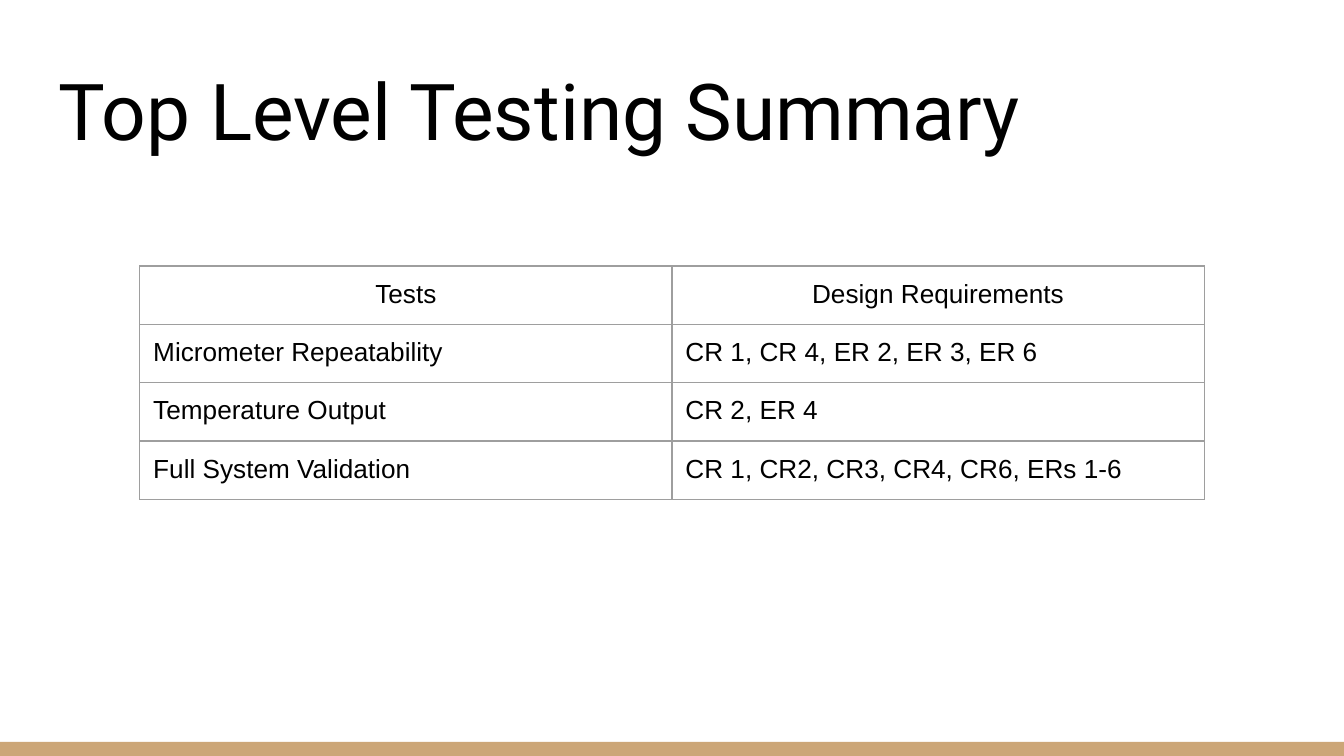
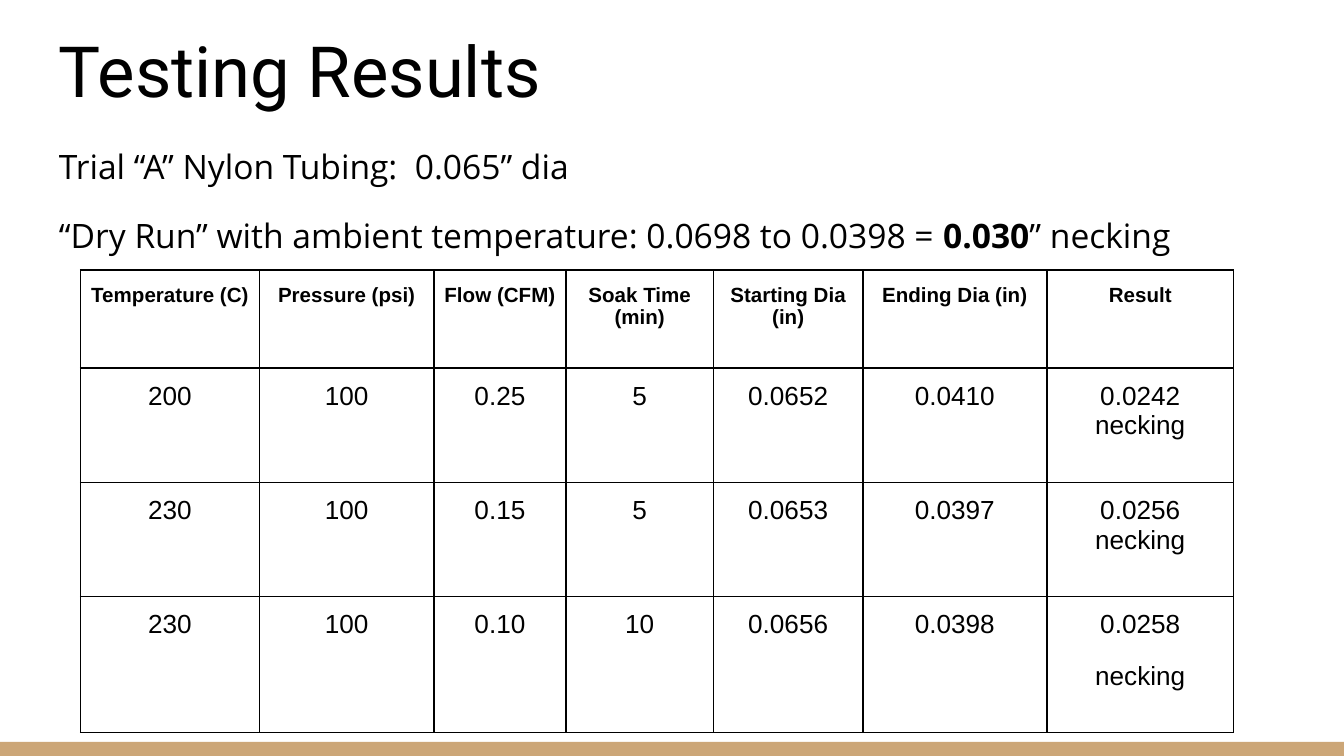
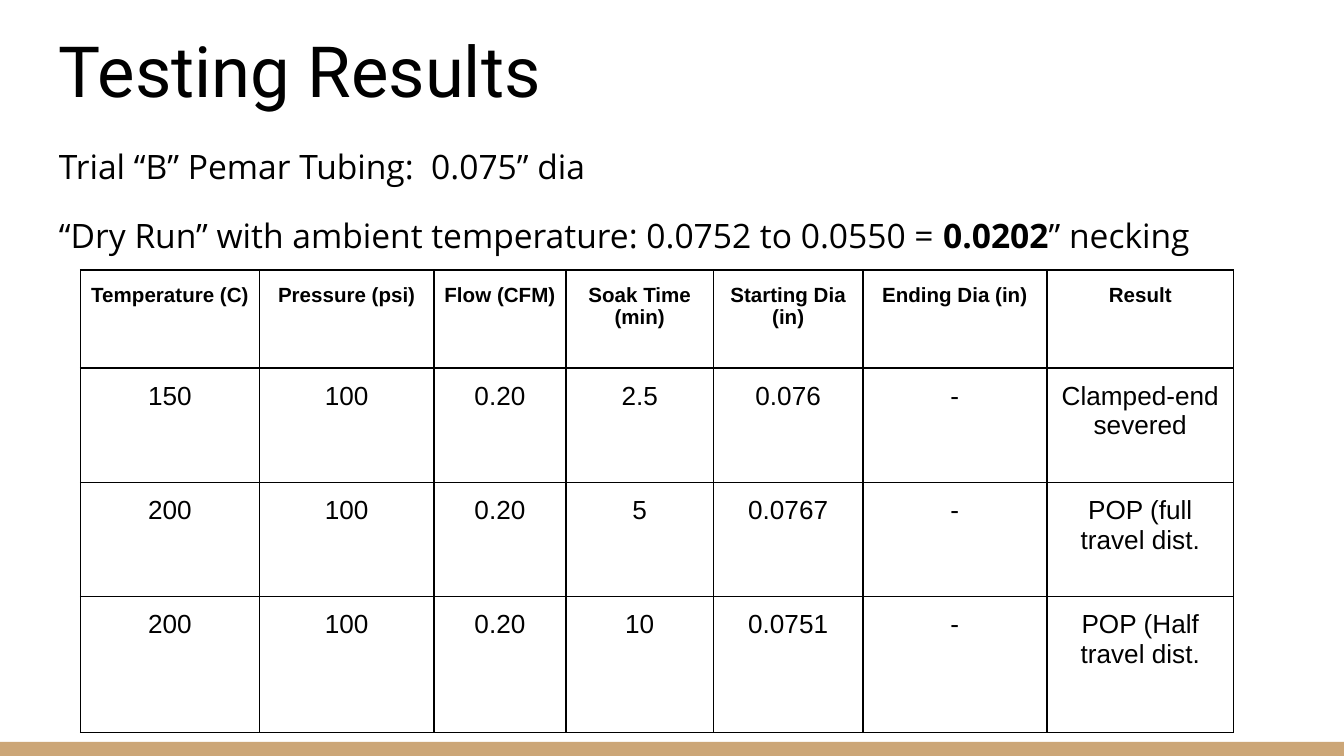
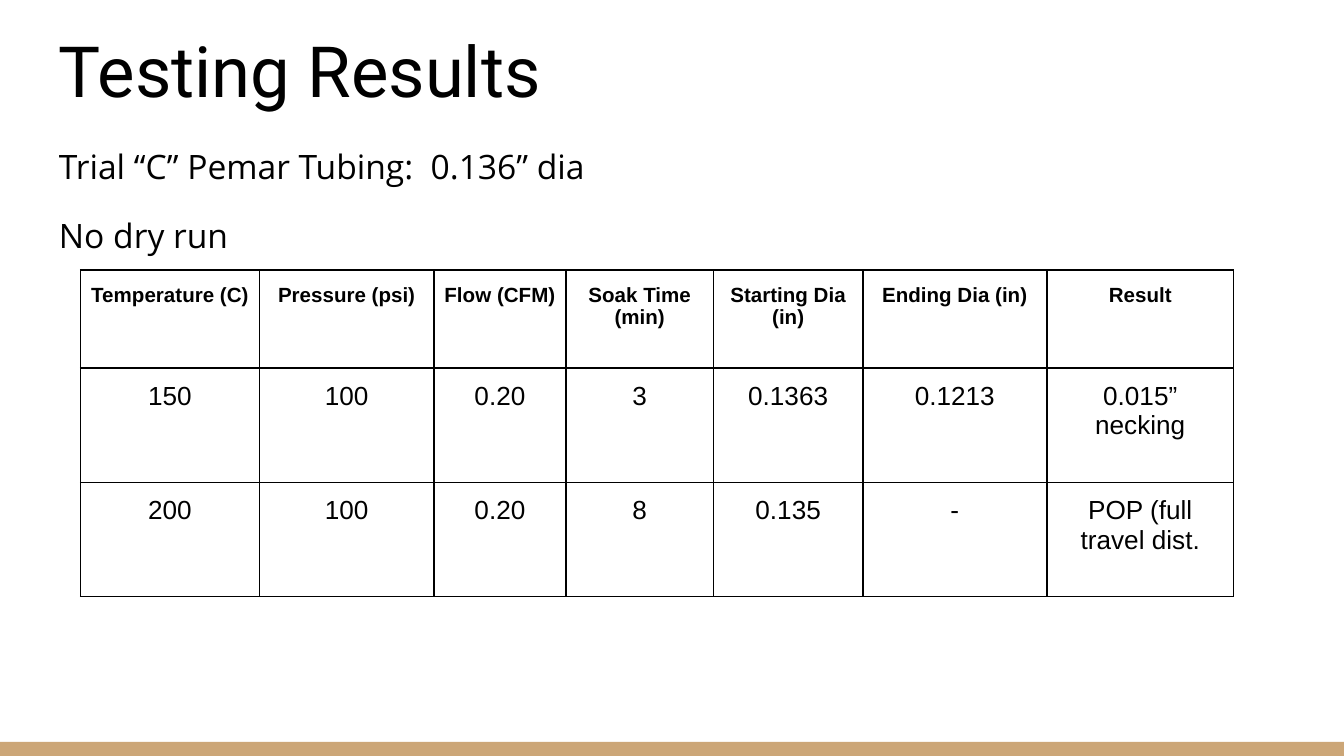
from lxml import etree
from pptx import Presentation
from pptx.dml.color import RGBColor
from pptx.enum.shapes import MSO_SHAPE
from pptx.enum.text import MSO_ANCHOR, PP_ALIGN
from pptx.oxml.ns import qn
from pptx.util import Inches, Pt

RECT = MSO_SHAPE.RECTANGLE
BOTTOM = MSO_ANCHOR.BOTTOM
LEFT, CENTER = PP_ALIGN.LEFT, PP_ALIGN.CENTER

WIDTH = 10
HEIGHT = WIDTH * 9 / 16
FRAME = 3.28
BLACK, WHITE, TAN, GRAY = "000000", "FFFFFF", "CCA677", "9E9E9E"
TITLE_FONT, BODY_FONT, TABLE_FONT = "Roboto", "Open Sans", "Arial"

SUMMARY = [
    ["Tests", "Design Requirements"],
    ["Micrometer Repeatability", "CR 1, CR 4, ER 2, ER 3, ER 6"],
    ["Temperature Output", "CR 2, ER 4"],
    ["Full System Validation", "CR 1, CR2, CR3, CR4, CR6, ERs 1-6"],
]
RESULT_HEADS = ["Temperature (C)", "Pressure (psi)", "Flow (CFM)", "Soak Time (min)",
                "Starting Dia (in)", "Ending Dia (in)", "Result"]
RESULT_COLS = [1.33, 1.3, 0.98, 1.1, 1.11, 1.37, 1.39]
RESULT_ROWS = [0.73, 0.85, 0.85, 1.01]
DRY_RUN = "“Dry Run” with ambient temperature: "
TRIALS = [
    ("Trial “A” Nylon Tubing:  0.065” dia",
     [DRY_RUN + "0.0698 to 0.0398 = ", ("0.030", True), "” necking"],
     [["200", "100", "0.25", "5", "0.0652", "0.0410", "0.0242 necking"],
      ["230", "100", "0.15", "5", "0.0653", "0.0397", "0.0256 necking"],
      ["230", "100", "0.10", "10", "0.0656", "0.0398", "0.0258\nnecking"]]),
    ("Trial “B” Pemar Tubing:  0.075” dia",
     [DRY_RUN + "0.0752 to 0.0550 = ", ("0.0202", True), "” necking"],
     [["150", "100", "0.20", "2.5", "0.076", "-", "Clamped-end severed"],
      ["200", "100", "0.20", "5", "0.0767", "-", "POP (full travel dist."],
      ["200", "100", "0.20", "10", "0.0751", "-", "POP (Half travel dist."]]),
    ("Trial “C” Pemar Tubing:  0.136” dia",
     ["No dry run"],
     [["150", "100", "0.20", "3", "0.1363", "0.1213", "0.015” necking"],
      ["200", "100", "0.20", "8", "0.135", "-", "POP (full travel dist."]]),
]


def rgb(value):
    """Turn a hex string into a colour."""
    return RGBColor.from_string(value)


def write(tf, paragraphs, font, size, bold=False, align=LEFT, before=0, spacing=None):
    """Fill a text frame; each paragraph is a list of strings or (text, bold) pairs."""
    for i, runs in enumerate(paragraphs):
        p = tf.add_paragraph() if i else tf.paragraphs[0]
        p.alignment, p.space_before, p.line_spacing = align, Pt(before), spacing
        for run in runs:
            text, strong = (run, bold) if isinstance(run, str) else run
            r = p.add_run()
            r.text = text
            r.font.name, r.font.size, r.font.bold = font, Pt(size), strong
            r.font.color.rgb = rgb(BLACK)


def add_text(s, box, paragraphs, anchor=None, **fmt):
    """Add a wrapping text box with equal insets."""
    tf = s.shapes.add_textbox(*map(Inches, box)).text_frame
    tf.word_wrap = True
    tf.margin_left = tf.margin_right = tf.margin_top = tf.margin_bottom = Inches(0.1)
    if anchor is not None:
        tf.vertical_anchor = anchor
    write(tf, paragraphs, **fmt)


def add_borders(cell, color, width):
    """Draw all four borders of a table cell."""
    tc_pr = cell._tc.get_or_add_tcPr()
    for side in ("a:lnL", "a:lnR", "a:lnT", "a:lnB"):
        ln = etree.SubElement(tc_pr, qn(side), w=str(Pt(width)))
        fill = etree.SubElement(ln, qn("a:solidFill"))
        etree.SubElement(fill, qn("a:srgbClr"), val=color)


def add_grid(s, left, top, cols, rows, data, border, side, head, body):
    """Add a plain bordered table whose first row takes the head format."""
    frame = s.shapes.add_table(len(rows), len(cols), Inches(left), Inches(top),
                               Inches(FRAME), Inches(FRAME))
    table = frame.table
    table.first_row = table.horz_banding = False
    for col, width in zip(table.columns, cols):
        col.width = Inches(width)
    for i, (row, height) in enumerate(zip(table.rows, rows)):
        row.height = Inches(height)
        for cell, text in zip(row.cells, data[i]):
            cell.margin_left = cell.margin_right = Inches(side)
            cell.margin_top = cell.margin_bottom = Inches(0.1)
            add_borders(cell, *border)
            cell.fill.background()
            write(cell.text_frame, [[line] for line in text.split("\n")],
                  font=TABLE_FONT, **(body if i else head))
    frame.width = frame.height = Inches(FRAME)


def add_slide(prs, title, top, height, size):
    """Add a white slide with its title and the bottom band."""
    s = prs.slides.add_slide(prs.slide_layouts[6])
    s.background.fill.solid()
    s.background.fill.fore_color.rgb = rgb(WHITE)
    sp = s.shapes.add_shape(RECT, 0, Inches(5.52), Inches(WIDTH), Inches(0.11))
    sp.shadow.inherit = False
    sp.fill.solid()
    sp.fill.fore_color.rgb = rgb(TAN)
    sp.line.fill.background()
    add_text(s, (0.34, top, 9.32, height), [[title]], anchor=BOTTOM,
             font=TITLE_FONT, size=size)
    return s


def summary_slide(prs):
    """Build the overview of tests and the requirements they cover."""
    s = add_slide(prs, "Top Level Testing Summary", 0.35, 0.91, 42)
    add_grid(s, 1.04, 1.98, [3.96] * 2, [0.42] * len(SUMMARY), SUMMARY,
             border=(GRAY, 0.75), side=0.1,
             head=dict(size=14, align=CENTER), body=dict(size=14))


def results_slide(prs, trial, dry_run, results):
    """Build the results of one tubing trial."""
    s = add_slide(prs, "Testing Results", 0.3, 0.63, 37.8)
    add_text(s, (0.34, 0.94, 9.32, 3.74), [[trial], dry_run],
             font=BODY_FONT, size=18, before=12, spacing=1.15)
    data = [RESULT_HEADS] + results
    cell = dict(align=CENTER, before=12)
    add_grid(s, 0.6, 2.01, RESULT_COLS, RESULT_ROWS[:len(data)], data,
             border=(BLACK, 1), side=0.07,
             head=dict(size=11, bold=True, **cell), body=dict(size=14, **cell))


def main():
    """Build and save the presentation."""
    prs = Presentation()
    prs.slide_width, prs.slide_height = Inches(WIDTH), Inches(HEIGHT)
    summary_slide(prs)
    for trial in TRIALS:
        results_slide(prs, *trial)
    prs.save("out.pptx")


if __name__ == "__main__":
    main()
